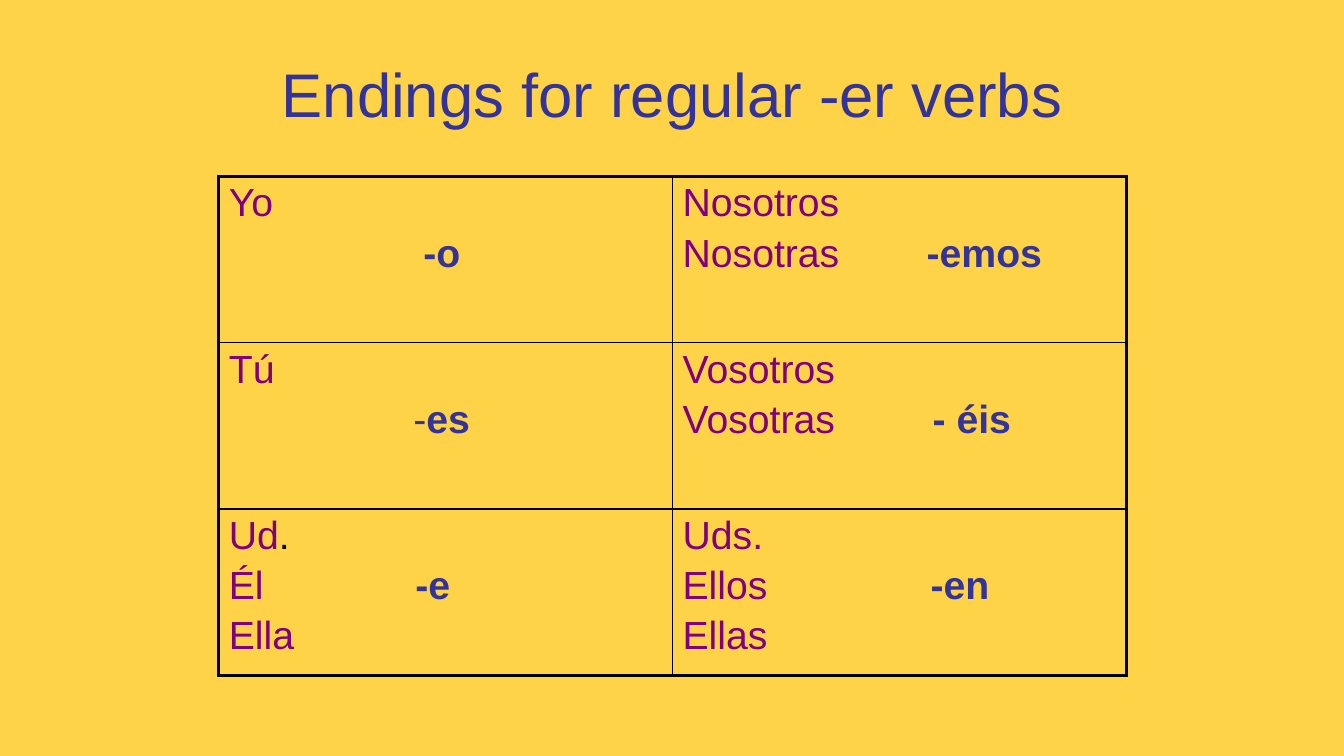
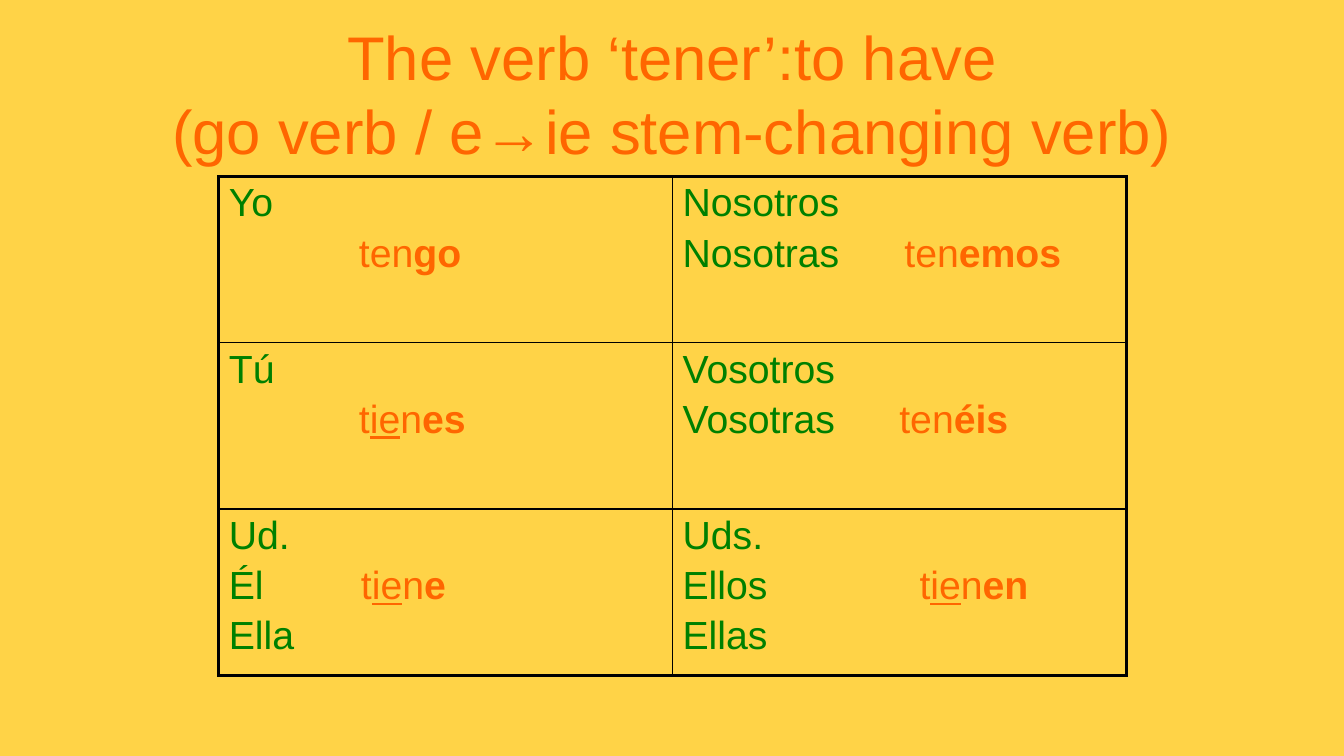
from dataclasses import dataclass

from lxml.etree import SubElement
from pptx import Presentation
from pptx.dml.color import RGBColor
from pptx.enum.text import MSO_ANCHOR, MSO_AUTO_SIZE, PP_ALIGN
from pptx.oxml import parse_xml
from pptx.oxml.ns import nsdecls, qn
from pptx.util import Inches, Pt

# Shared look
FONT = "Arial"
GOLD, BLACK = "FFD347", "000000"
WIDE, HIGH = 13.33, 7.5
LEFT, TOP = 2.17, 1.75
COL, ROW = 4.5, 1.65
THICK, THIN = 2.25, 1


@dataclass
class Form:
    """A verb form: plain stem, underlined vowels, plain rest, bold ending."""
    tab: float
    end: str
    stem: str = ""
    vowel: str = ""
    rest: str = ""


@dataclass
class Chart:
    title: str
    noun: str
    verb: str
    dot: str
    forms: list[list[Form]]


PERSONS = [
    [["Yo", ""], ["Nosotros", "Nosotras"]],
    [["Tú", ""], ["Vosotros", "Vosotras"]],
    [["Ud.", "Él", "Ella"], ["Uds.", "Ellos", "Ellas"]],
]

CHARTS = [
    Chart("Endings for regular -er verbs", "800080", "333399", BLACK, [
        [Form(1.93, "-o"), Form(2.42, "-emos")],
        [Form(1.83, "es", "-"), Form(2.48, "- éis")],
        [Form(1.85, "-e"), Form(2.46, "-en")],
    ]),
    Chart("The verb ‘tener’:to have\n(go verb / e→ie stem-changing verb)",
          "008000", "FF6600", "008000", [
              [Form(1.29, "go", "ten"), Form(2.2, "emos", "ten")],
              [Form(1.29, "es", "t", "ie", "n"), Form(2.15, "éis", "ten")],
              [Form(1.31, "e", "t", "ie", "n"),
               Form(2.35, "en", "t", "ie", "n")],
          ]),
]


def paint(font, tint: str) -> None:
    font.color.rgb = RGBColor.from_string(tint)


def style(para, size: float, tint: str) -> None:
    para.font.name = FONT
    para.font.size = Pt(size)
    paint(para.font, tint)


def add_title(slide, text: str, tint: str) -> None:
    box = slide.shapes.title
    box.left, box.top = Inches(0.67), Inches(0.3)
    box.width, box.height = Inches(12), Inches(1.25)
    frame = box.text_frame
    frame.auto_size = MSO_AUTO_SIZE.NONE
    frame.vertical_anchor = MSO_ANCHOR.MIDDLE
    para = frame.paragraphs[0]
    para.text = text
    para.alignment = PP_ALIGN.CENTER
    style(para, 44, tint)


def set_tab(para, at: float) -> None:
    props = para._p.get_or_add_pPr()
    tabs = SubElement(props, qn("a:tabLst"))
    SubElement(tabs, qn("a:tab"), pos=str(Inches(at)), algn="l")


def add_form(para, form: Form, tint: str) -> None:
    parts = [(form.stem, False, False), (form.vowel, False, True),
             (form.rest, False, False), (form.end, True, False)]
    for text, bold, under in parts:
        if text:
            run = para.add_run()
            run.text = text
            run.font.bold, run.font.underline = bold, under
            paint(run.font, tint)


def set_edges(cell, row: int, col: int) -> None:
    outer = {"L": col == 0, "R": col == 1, "T": row == 0, "B": row == 2}
    props = cell._tc.get_or_add_tcPr()
    for spot, (side, edge) in enumerate(outer.items()):
        width = Pt(THICK if edge else THIN)
        props.insert(spot, parse_xml(
            f'<a:ln{side} {nsdecls("a")} w="{width}"><a:solidFill>'
            f'<a:srgbClr val="{BLACK}"/></a:solidFill></a:ln{side}>'))


def fill_cell(cell, words: list[str], form: Form, chart: Chart) -> None:
    frame = cell.text_frame
    for line, word in enumerate(words):
        para = frame.add_paragraph() if line else frame.paragraphs[0]
        para.space_before = Pt(4.6 if line else 0)
        if line == 1:
            set_tab(para, form.tab)
        style(para, 28, chart.noun)
        # The stop after "Ud" has its own colour
        pieces = ["Ud", "."] if word == "Ud." else [word]
        for piece in pieces:
            run = para.add_run()
            run.text = piece + ("\t" if line == 1 else "")
            if piece == ".":
                paint(run.font, chart.dot)
        if line == 1:
            add_form(para, form, chart.verb)


def add_grid(slide, chart: Chart) -> None:
    table = slide.shapes.add_table(
        3, 2, Inches(LEFT), Inches(TOP), Inches(2 * COL), Inches(3 * ROW)).table
    table.first_row = table.horz_banding = False
    for row, pair in enumerate(PERSONS):
        table.rows[row].height = Inches(ROW)
        for col, words in enumerate(pair):
            cell = table.cell(row, col)
            cell.fill.background()
            set_edges(cell, row, col)
            fill_cell(cell, words, chart.forms[row][col], chart)


def main() -> None:
    deck = Presentation()
    deck.slide_width, deck.slide_height = Inches(WIDE), Inches(HIGH)
    back = deck.slide_master.background.fill
    back.solid()
    back.fore_color.rgb = RGBColor.from_string(GOLD)
    for chart in CHARTS:
        slide = deck.slides.add_slide(deck.slide_layouts[5])
        add_title(slide, chart.title, chart.verb)
        add_grid(slide, chart)
    deck.save("out.pptx")


if __name__ == "__main__":
    main()
